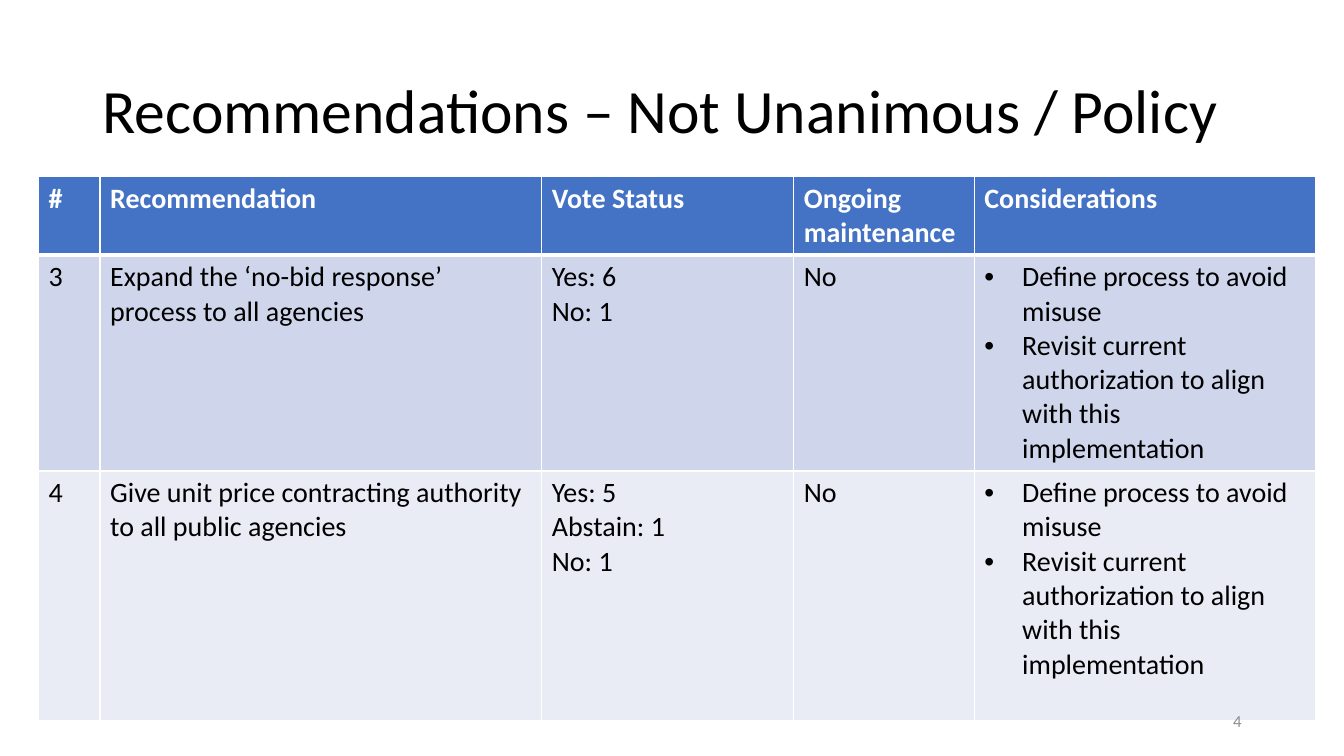
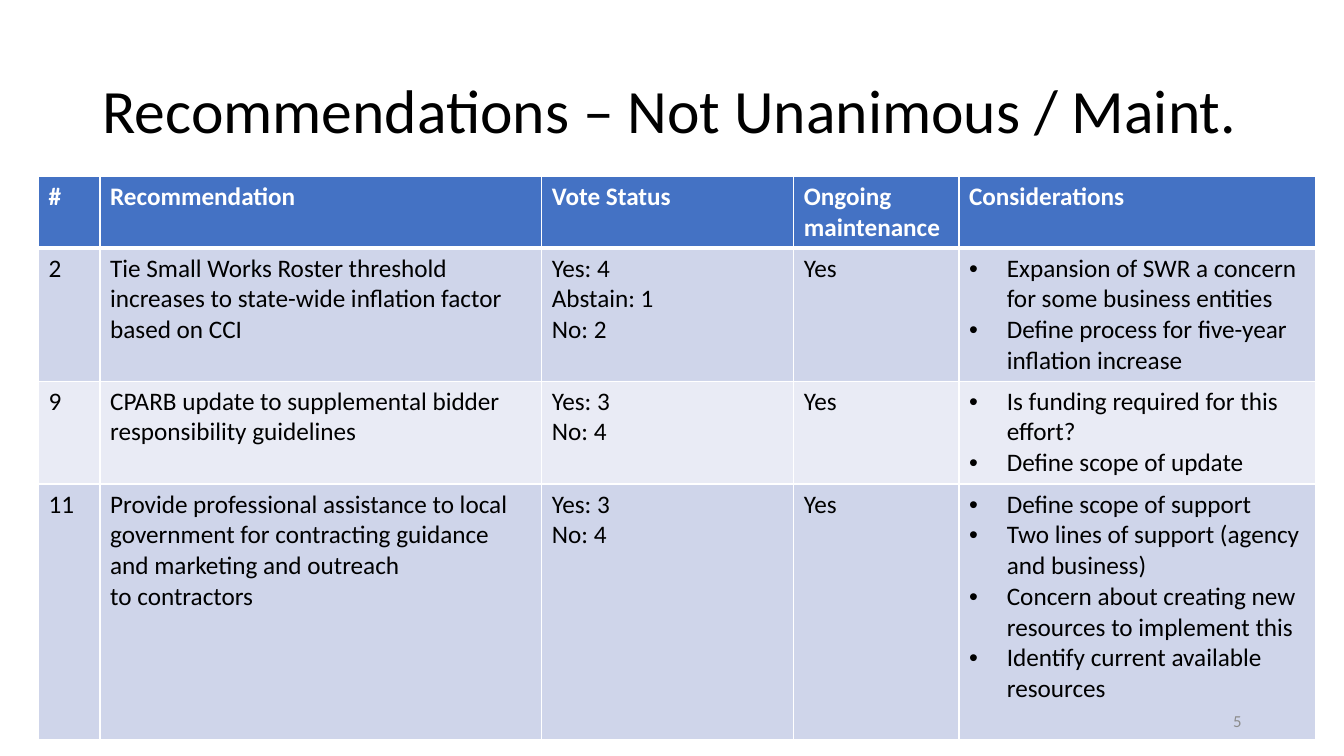
from lxml import etree
from pptx import Presentation
from pptx.dml.color import RGBColor
from pptx.enum import text as t
from pptx.oxml import ns
from pptx.util import Pt

# Shared look
FONT = "Calibri"
BLACK = RGBColor(0x00, 0x00, 0x00)
WHITE = RGBColor(0xFF, 0xFF, 0xFF)
BLUE = RGBColor(0x44, 0x72, 0xC4)
GREY = RGBColor(0x8C, 0x8C, 0x8C)
BANDS = [RGBColor(0xCF, 0xD5, 0xEA), RGBColor(0xE9, 0xEB, 0xF5)]
HEAD = ["#", "Recommendation", "Vote Status", "Ongoing maintenance",
        "Considerations"]
MISUSE = ("Define process to avoid misuse\n"
          "Revisit current authorization to align with this implementation")

# Content of each slide
DECK = [
    dict(page="4", title="Recommendations – Not Unanimous / Policy", size=20,
         cols=[44, 315.5, 180, 129, 244], rows=[55.5, 153.5, 178.5],
         body=[
             ["3", "Expand the ‘no-bid response’ process to all agencies",
              "Yes: 6\nNo: 1", "No", MISUSE],
             ["4", "Give unit price contracting authority to all public agencies",
              "Yes: 5\nAbstain: 1\nNo: 1", "No", MISUSE]]),
    dict(page="5", title="Recommendations – Not Unanimous / Maint.", size=18,
         cols=[44, 315.5, 180, 118, 255], rows=[50.5, 95, 73.5, 182.5],
         body=[
             ["2", "Tie Small Works Roster threshold increases to state-wide "
              "inflation factor based on CCI",
              "Yes: 4\nAbstain: 1\nNo: 2", "Yes",
              "Expansion of SWR a concern for some business entities\n"
              "Define process for five-year inflation increase"],
             ["9", "CPARB update to supplemental bidder responsibility guidelines",
              "Yes: 3\nNo: 4", "Yes",
              "Is funding required for this effort?\nDefine scope of update"],
             ["11", "Provide professional assistance to local government for "
              "contracting guidance and marketing and outreach\nto contractors",
              "Yes: 3\nNo: 4", "Yes",
              "Define scope of support\n"
              "Two lines of support (agency and business)\n"
              "Concern about creating new resources to implement this\n"
              "Identify current available resources"]]),
]


def write(frame, words, size, color, bold=False, align=t.PP_ALIGN.LEFT):
    frame.text = words
    for para in frame.paragraphs:
        para.alignment = align
        for run in para.runs:
            font = run.font
            font.name, font.size, font.bold = FONT, Pt(size), bold
            font.color.rgb = color


def add(parent, tag, **attrs):
    node = etree.SubElement(parent, ns.qn(tag))
    for key, value in attrs.items():
        node.set(key, str(value))
    return node


prs = Presentation()
prs.slide_width, prs.slide_height = Pt(960), Pt(540)

for data in DECK:
    slide = prs.slides.add_slide(prs.slide_layouts[5])

    # Title
    title = slide.shapes.title
    title.left, title.top = Pt(66), Pt(29)
    title.width, title.height = Pt(828), Pt(104)
    write(title.text_frame, data["title"], 44, BLACK)
    title.text_frame.auto_size = t.MSO_AUTO_SIZE.NONE
    title.text_frame.vertical_anchor = t.MSO_ANCHOR.MIDDLE
    title.text_frame.paragraphs[0].line_spacing = 0.9

    # Table grid
    cols, rows = data["cols"], data["rows"]
    table = slide.shapes.add_table(
        len(rows), len(cols), Pt(27.5), Pt(126),
        Pt(sum(cols)), Pt(sum(rows))).table
    for col, width in zip(table.columns, cols):
        col.width = Pt(width)
    for row, height in zip(table.rows, rows):
        row.height = Pt(height)

    # Cells
    for r, line in enumerate([HEAD] + data["body"]):
        for c, words in enumerate(line):
            cell = table.cell(r, c)
            head = r == 0
            write(cell.text_frame, words, data["size"],
                  WHITE if head else BLACK, head)

            # White borders, thicker below the header
            props = cell._tc.get_or_add_tcPr()
            for side in "LRTB":
                thick = (r, side) in [(0, "B"), (1, "T")]
                edge = add(props, "a:ln" + side, w=Pt(3 if thick else 1))
                add(add(edge, "a:solidFill"), "a:srgbClr", val=WHITE)
            cell.fill.solid()
            cell.fill.fore_color.rgb = BLUE if head else BANDS[(r - 1) % 2]

            # Bullets in the last column
            if c == len(HEAD) - 1 and not head:
                for para in cell.text_frame.paragraphs:
                    form = para._p.get_or_add_pPr()
                    form.set("marL", str(Pt(27)))
                    form.set("indent", str(-Pt(27)))
                    add(form, "a:buFont", typeface="Arial")
                    add(form, "a:buChar", char="•")

    # Page number
    page = slide.shapes.add_textbox(Pt(678), Pt(500.5), Pt(216), Pt(28.5))
    page.text_frame.word_wrap = True
    page.text_frame.vertical_anchor = t.MSO_ANCHOR.MIDDLE
    write(page.text_frame, data["page"], 12, GREY, align=t.PP_ALIGN.RIGHT)

prs.save("out.pptx")
